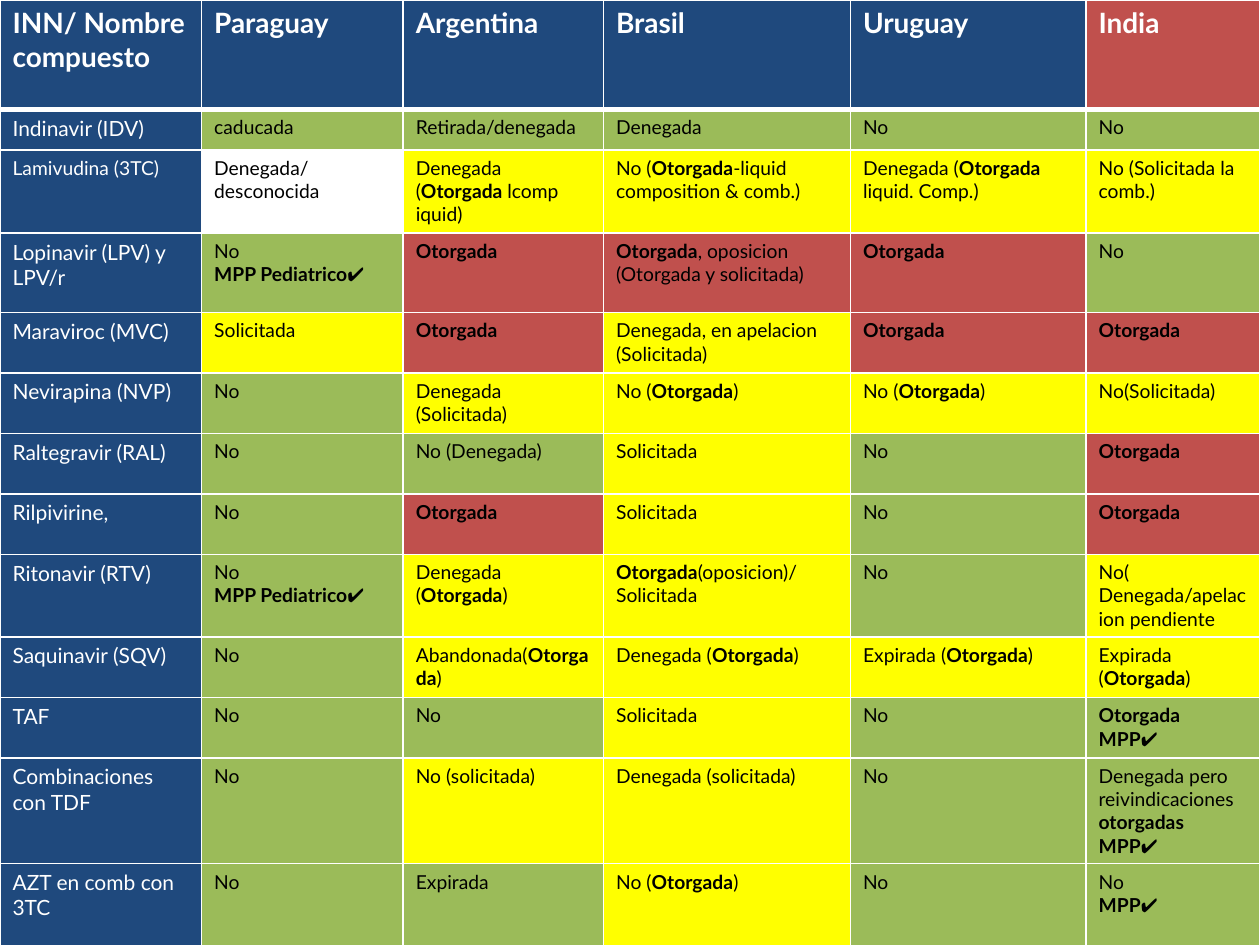
from lxml import etree
from pptx import Presentation
from pptx.dml.color import RGBColor
from pptx.oxml.ns import qn
from pptx.util import Inches, Pt

NAVY, RED, GREEN, YELLOW = "1F497D", "C0504D", "9BBB59", "FFFF00"
WHITE, BLACK = "FFFFFF", "000000"
STATUS_FILLS = {"G": GREEN, "Y": YELLOW, "R": RED, "W": WHITE}
CHECK = "✔"

COUNTRIES = ["INN/ Nombre compuesto", "Paraguay", "Argentina", "Brasil", "Uruguay", "India"]
COLUMN_WIDTHS = [1.6, 1.6, 1.59, 1.96, 1.87, 1.38]
HEADER_HEIGHT = 0.87

# Compound, row height, status colour of each country, and the country texts.
# Asterisks enclose bold text; a line break starts a new paragraph.
COMPOUNDS = [
    ("Indinavir (IDV)", 0.32, "GGGGG",
     ["caducada", "Retirada/denegada", "Denegada", "No", "No"]),
    ("Lamivudina (3TC)", 0.66, "WYYYY",
     ["Denegada/desconocida", "Denegada (*Otorgada *lcomp iquid)",
      "No (*Otorgada*-liquid composition & comb.)",
      "Denegada (*Otorgada *liquid. Comp.)", "No (Solicitada la comb.)"]),
    ("Lopinavir (LPV) y LPV/r", 0.63, "GRRRG",
     ["No\n*MPP Pediatrico✔*", "*Otorgada*",
      "*Otorgada*, oposicion (Otorgada y solicitada)", "*Otorgada*", "No"]),
    ("Maraviroc (MVC)", 0.48, "YRYRR",
     ["Solicitada", "*Otorgada*", "Denegada, en apelacion (Solicitada)",
      "*Otorgada*", "*Otorgada*"]),
    ("Nevirapina (NVP)", 0.48, "GYYYY",
     ["No", "Denegada (Solicitada)", "No (*Otorgada*)", "No (*Otorgada*)",
      "No(Solicitada)"]),
    ("Raltegravir (RAL)", 0.48, "GGYGR",
     ["No", "No (Denegada)", "Solicitada", "No", "*Otorgada*"]),
    ("Rilpivirine,", 0.48, "GRYGR",
     ["No", "*Otorgada*", "Solicitada", "No", "*Otorgada*"]),
    ("Ritonavir (RTV)", 0.65, "GYYGY",
     ["No\n*MPP Pediatrico✔*", "Denegada (*Otorgada*)",
      "*Otorgada*(oposicion)/\nSolicitada", "No",
      "No( Denegada/apelacion pendiente"]),
    ("Saquinavir (SQV)", 0.48, "GYYYY",
     ["No", "Abandonada(*Otorgada*)", "Denegada (*Otorgada*)",
      "Expirada (*Otorgada*)", "Expirada (*Otorgada*)"]),
    ("TAF", 0.48, "GGYGG",
     ["No", "No", "Solicitada", "No", "*Otorgada*\n*MPP✔*"]),
    ("Combinaciones con TDF", 0.84, "GYYGG",
     ["No", "No (solicitada)", "Denegada (solicitada)", "No",
      "Denegada pero reivindicaciones *otorgadas*\n*MPP✔*"]),
    ("AZT en comb con 3TC", 0.65, "GGYGG",
     ["No", "Expirada", "No (*Otorgada*)", "No", "No\n*MPP✔*"]),
]


def rgb(color):
    return RGBColor.from_string(color)


class PatentSlide:
    font = "Lato"
    symbol_font = "Arial"
    header_size, compound_size, status_size = 16, 12, 11
    border, header_border = 1, 3

    def __init__(self, prs):
        self.s = prs.slides.add_slide(prs.slide_layouts[6])

    def table(self, widths, heights):
        frame = self.s.shapes.add_table(
            len(heights), len(widths), 0, 0,
            Inches(sum(widths)), Inches(sum(heights)))
        table = frame.table
        table.first_row = True
        table.horz_banding = False
        for column, width in zip(table.columns, widths):
            column.width = Inches(width)
        for row, height in zip(table.rows, heights):
            row.height = Inches(height)
        return table

    def cell(self, cell, text, fill, size, color, bold=False, top=border, bottom=border):
        cell.fill.solid()
        cell.fill.fore_color.rgb = rgb(fill)
        self.borders(cell, top, bottom)
        tf = cell.text_frame
        for i, line in enumerate(text.split("\n")):
            p = tf.paragraphs[0] if i == 0 else tf.add_paragraph()
            for j, part in enumerate(line.split("*")):
                words, check, _ = part.partition(CHECK)
                for piece, font in ((words, self.font), (check, self.symbol_font)):
                    if piece:
                        self.run(p, piece, font, size, color, bold or j % 2 == 1)

    def run(self, p, text, font, size, color, bold):
        r = p.add_run()
        r.text = text
        r.font.name = font
        r.font.size = Pt(size)
        r.font.bold = bold
        r.font.color.rgb = rgb(color)
        if text == CHECK:
            for tag in ("a:ea", "a:cs"):
                etree.SubElement(r.font._element, qn(tag), typeface=font)

    def borders(self, cell, top, bottom):
        tc_pr = cell._tc.get_or_add_tcPr()
        sides = {"L": self.border, "R": self.border, "T": top, "B": bottom}
        for i, (side, width) in enumerate(sides.items()):
            ln = etree.Element(qn(f"a:ln{side}"), w=str(Pt(width)))
            fill = etree.SubElement(ln, qn("a:solidFill"))
            etree.SubElement(fill, qn("a:srgbClr"), val=WHITE)
            tc_pr.insert(i, ln)


def main():
    prs = Presentation()
    prs.slide_width, prs.slide_height = Inches(10), Inches(7.5)
    slide = PatentSlide(prs)
    table = slide.table(COLUMN_WIDTHS, [HEADER_HEIGHT] + [row[1] for row in COMPOUNDS])

    # Header row
    for col, country in enumerate(COUNTRIES):
        slide.cell(table.cell(0, col), country, RED if country == "India" else NAVY,
                   slide.header_size, WHITE, bold=True, bottom=slide.header_border)

    # Compounds with the patent status in each country
    for row, (compound, _, codes, statuses) in enumerate(COMPOUNDS, start=1):
        top = slide.header_border if row == 1 else slide.border
        size = slide.status_size if compound.startswith("Lamivudina") else slide.compound_size
        slide.cell(table.cell(row, 0), compound, NAVY, size, WHITE, top=top)
        for col, (code, status) in enumerate(zip(codes, statuses), start=1):
            slide.cell(table.cell(row, col), status, STATUS_FILLS[code],
                       slide.status_size, BLACK, top=top)

    prs.save("out.pptx")


if __name__ == "__main__":
    main()
